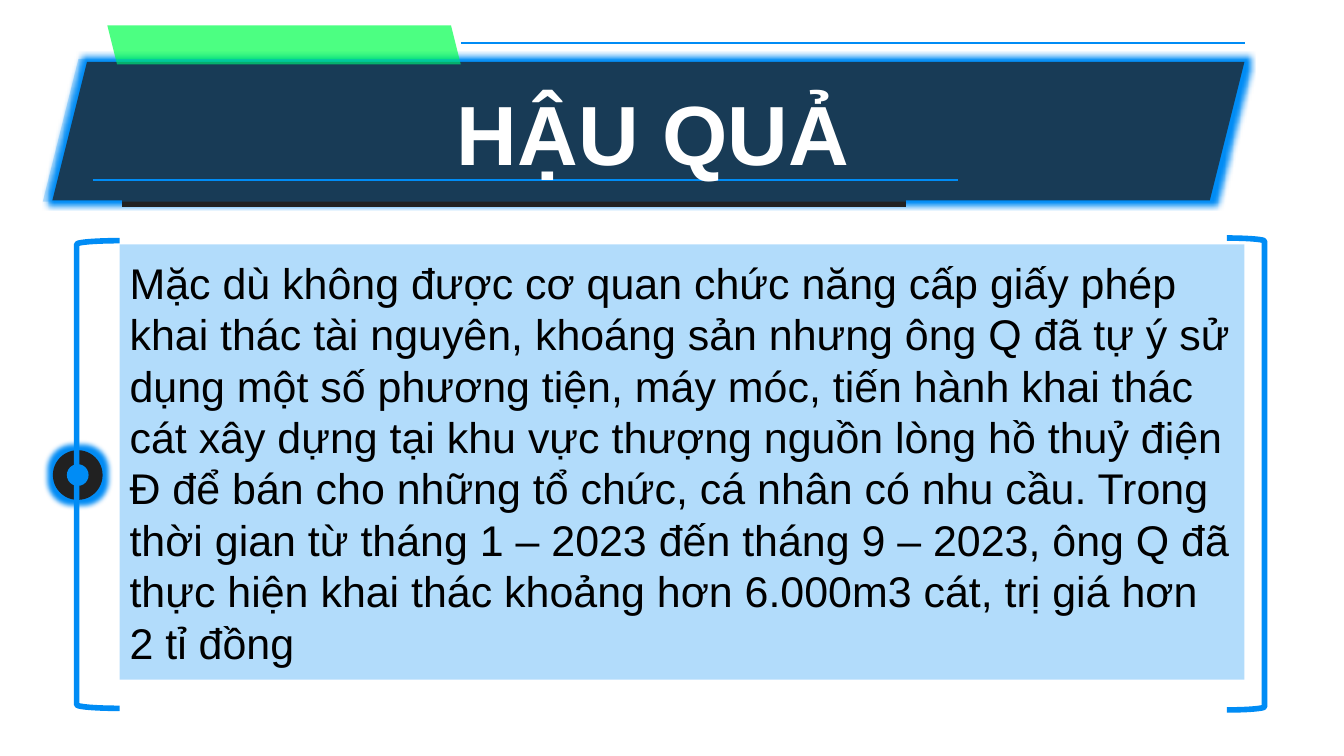
from dataclasses import dataclass

from lxml.etree import SubElement
from pptx import Presentation
from pptx.dml.color import RGBColor as Color
from pptx.enum.shapes import MSO_CONNECTOR as Connector, MSO_SHAPE as Shape
from pptx.enum.text import MSO_ANCHOR as Anchor, MSO_AUTO_SIZE as AutoSize, PP_ALIGN as Align
from pptx.oxml.ns import qn
from pptx.util import Cm, Pt


@dataclass(frozen=True)
class Theme:
    font: str = "Arial"
    dark: str = "212121"
    blue: str = "008CF5"
    green: str = "00FF4E"
    white: str = "FFFFFF"
    black: str = "000000"
    title_size: int = 45
    body_size: int = 23
    thin: float = 0.75
    thick: int = 3


theme = Theme()

# Content
TITLE = "HẬU QUẢ"
BODY = (
    "Mặc dù không được cơ quan chức năng cấp giấy phép khai thác tài nguyên, "
    "khoáng sản nhưng ông Q đã tự ý sử dụng một số phương tiện, máy móc, "
    "tiến hành khai thác cát xây dựng tại khu vực thượng nguồn lòng hồ thuỷ điện Đ "
    "để bán cho những tổ chức, cá nhân có nhu cầu. "
    "Trong thời gian từ tháng 1 – 2023 đến tháng 9 – 2023, ông Q đã thực hiện "
    "khai thác khoảng hơn 6.000m3 cát, trị giá hơn 2 tỉ đồng"
)

# Places in centimetres: left, top, width, height
BANNER = (0.99, 1.17, 22.53, 2.62)
TAB = (2.03, 0.48, 6.68, 0.74)
BAR = (2.31, 3.61, 14.81, 0.3)
TINT = (0.81, 1.12, 22.76, 2.69)
TITLE_BOX = (2.08, 1.42, 20.52, 2.16)
BODY_BOX = (2.26, 4.62, 21.26, 8.23)
BRACKETS = [((1.45, 4.55, 0.81, 8.84), False), ((23.19, 4.5, 0.71, 8.92), True)]
RULES = [(8.71, 23.52, 0.81), (1.75, 18.11, 3.4)]  # start, end, height on page
KNOB_CENTRE = (1.47, 8.98)
KNOB_DISCS = [(0.94, theme.dark, True), (0.41, theme.blue, False)]  # size, colour, glow
GLOW_RADIUS = 0.2

deck = Presentation()
deck.slide_width, deck.slide_height = Cm(25.4), Cm(14.29)
page = deck.slides.add_slide(deck.slide_layouts[6])


def lengths(place):
    return [Cm(value) for value in place]


def add_color(parent, color):
    return SubElement(parent, qn("a:srgbClr"), val=color)


def add_shape(kind, place, fill=None, opacity=100, line=None, flip=False, glow=False):
    shape = page.shapes.add_shape(kind, *lengths(place))
    shape.shadow.inherit = False
    properties = shape._element.spPr
    if fill:
        shape.fill.solid()
        shape.fill.fore_color.rgb = Color.from_string(fill)
        if opacity < 100:
            color = properties.find(qn("a:solidFill")).find(qn("a:srgbClr"))
            SubElement(color, qn("a:alpha"), val=str(opacity * 1000))
    else:
        shape.fill.background()
    if line:
        shape.line.color.rgb = Color.from_string(line)
        shape.line.width = Pt(theme.thick)
    else:
        shape.line.fill.background()
    if flip:
        properties.find(qn("a:xfrm")).set("flipH", "1")
    if glow:
        effects = properties.find(qn("a:effectLst"))
        halo = SubElement(effects, qn("a:glow"), rad=str(Cm(GLOW_RADIUS)))
        add_color(halo, theme.blue)
    return shape


def write(box, text, size, color, align, bold=False):
    box.text_frame.word_wrap = True
    para = box.text_frame.paragraphs[0]
    para.text = text
    para.alignment = align
    font = para.runs[0].font
    font.name, font.size, font.bold = theme.font, Pt(size), bold
    font.color.rgb = Color.from_string(color)


# Banner with its tab, underline bar, rules and tint
add_shape(Shape.PARALLELOGRAM, BANNER, theme.dark, glow=True)
add_shape(Shape.PARALLELOGRAM, TAB, theme.green, opacity=70, flip=True)
add_shape(Shape.RECTANGLE, BAR, theme.dark)
for start, end, height in RULES:
    rule = page.shapes.add_connector(Connector.STRAIGHT, *lengths((start, height, end, height)))
    rule.line.color.rgb = Color.from_string(theme.blue)
    rule.line.width = Pt(theme.thin)
    SubElement(rule._element.spPr, qn("a:effectLst"))
add_shape(Shape.PARALLELOGRAM, TINT, theme.blue, opacity=25)

# Title
title = page.shapes.add_textbox(*lengths(TITLE_BOX))
write(title, TITLE, theme.title_size, theme.white, Align.CENTER, bold=True)
title.text_frame.auto_size = AutoSize.SHAPE_TO_FIT_TEXT

# Body panel
body = add_shape(Shape.RECTANGLE, BODY_BOX, theme.blue, opacity=30)
write(body, BODY, theme.body_size, theme.black, Align.LEFT)
frame = body.text_frame
frame.vertical_anchor = Anchor.MIDDLE
frame.margin_left = frame.margin_right = Cm(0.19)
frame.margin_top = frame.margin_bottom = Cm(0.1)

# Knob on the left bracket
for size, color, glow in KNOB_DISCS:
    left, top = (centre - size / 2 for centre in KNOB_CENTRE)
    add_shape(Shape.OVAL, (left, top, size, size), color, glow=glow)

# Brackets around the panel
for place, flip in BRACKETS:
    add_shape(Shape.LEFT_BRACKET, place, line=theme.blue, flip=flip)

deck.save("out.pptx")
